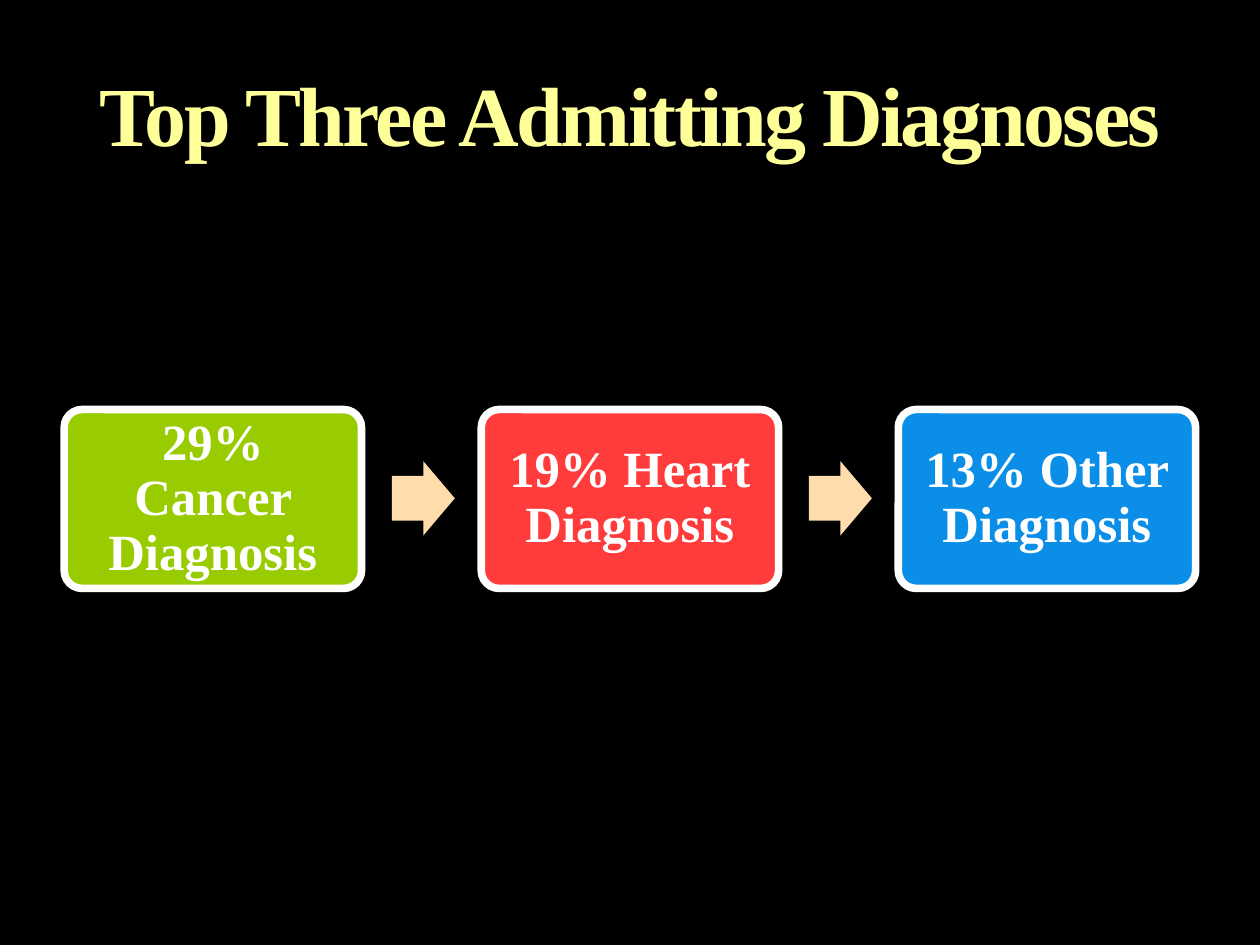
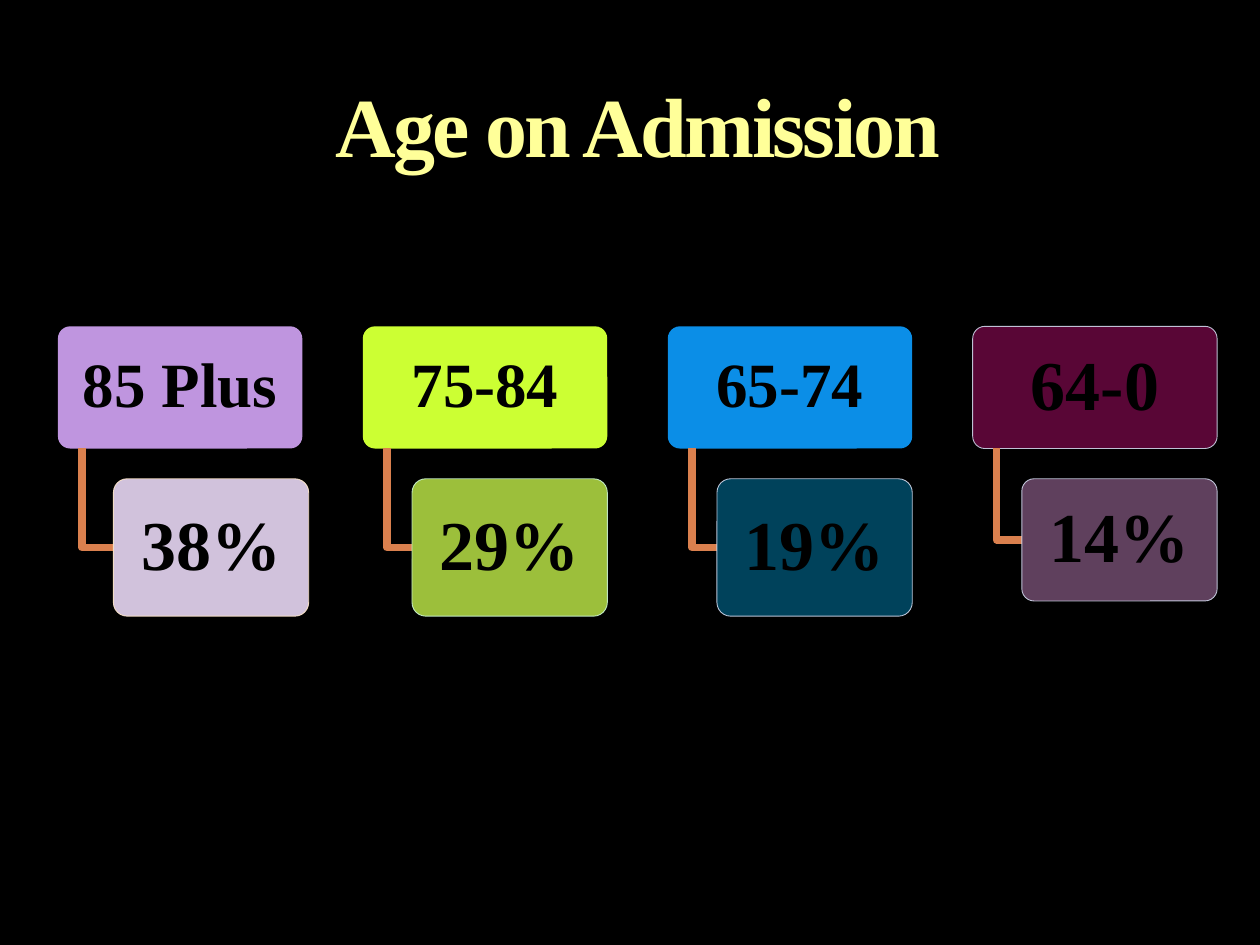
import pptx
import pptx.dml.color
import pptx.enum.shapes
import pptx.enum.text
import pptx.oxml.ns
import pptx.util
from lxml import etree

Inches = pptx.util.Inches
Pt = pptx.util.Pt
SHAPES = pptx.enum.shapes.MSO_SHAPE
ANCHOR = pptx.enum.text.MSO_ANCHOR

FONT = "Times New Roman"
BLACK, WHITE = "000000", "FFFFFF"
TITLE_YELLOW = "FFFF99"
ARROW_PEACH = "FFDCAB"
ELBOW_ORANGE = "DA804E"
PALE_BLUE = "CFD6EA"
THICK, THIN = 4.33, 0.5


def rgb(color):
    return pptx.dml.color.RGBColor.from_string(color)


def set_opacity(parent, percent):
    """Make the solid fill directly inside an XML element translucent."""
    if percent < 100:
        qn = pptx.oxml.ns.qn
        color = parent.find(qn("a:solidFill")).find(qn("a:srgbClr"))
        etree.SubElement(color, qn("a:alpha")).set("val", str(percent * 1000))


class Deck:
    def __init__(self):
        self.presentation = pptx.Presentation()
        self.presentation.slide_width = Inches(10)
        self.presentation.slide_height = Inches(7.5)
        self.slide = None

    def add_slide(self, title, left, top):
        layout = self.presentation.slide_layouts[5]
        self.slide = self.presentation.slides.add_slide(layout)
        background = self.slide.background.fill
        background.solid()
        background.fore_color.rgb = rgb(BLACK)
        shape = self.slide.shapes.title
        shape.left, shape.top = Inches(left), Inches(top)
        shape.width, shape.height = Inches(10), Inches(0.75)
        self.set_text(shape, title, 48, TITLE_YELLOW, (0, 0), ANCHOR.TOP)
        shape.text_frame.auto_size = pptx.enum.text.MSO_AUTO_SIZE.SHAPE_TO_FIT_TEXT
        run = shape.text_frame.paragraphs[0].runs[0]
        run._r.get_or_add_rPr().set("spc", "-150")

    def set_text(self, shape, text, size, color, insets, anchor=ANCHOR.MIDDLE):
        """Put one centred bold paragraph in a shape; insets are (side, top)."""
        frame = shape.text_frame
        frame.word_wrap = True
        frame.vertical_anchor = anchor
        frame.margin_left = frame.margin_right = Inches(insets[0])
        frame.margin_top = frame.margin_bottom = Inches(insets[1])
        paragraph = frame.paragraphs[0]
        paragraph.text = text
        paragraph.alignment = pptx.enum.text.PP_ALIGN.CENTER
        paragraph.line_spacing = 0.9
        paragraph.font.name = FONT
        paragraph.font.size = Pt(size)
        paragraph.font.bold = True
        paragraph.font.color.rgb = rgb(color)

    def outline(self, shape, color, width, opacity=100):
        shape.line.width = Pt(width)
        shape.line.color.rgb = rgb(color)
        line = shape._element.spPr.find(pptx.oxml.ns.qn("a:ln"))
        set_opacity(line, opacity)

    def shape(self, kind, box, adjustments, fill, opacity=100):
        """Add a filled shape without outline; box is left, top, width, height."""
        shape = self.slide.shapes.add_shape(kind, *map(Inches, box))
        shape.shadow.inherit = False
        for index, value in enumerate(adjustments):
            shape.adjustments[index] = value
        shape.fill.solid()
        shape.fill.fore_color.rgb = rgb(fill)
        set_opacity(shape._element.spPr, opacity)
        shape.line.fill.background()
        return shape

    def card(self, box, text, size, color, insets, fill, opacity=100):
        card = self.shape(SHAPES.ROUNDED_RECTANGLE, box, [0.1], fill, opacity)
        self.set_text(card, text, size, color, insets)
        return card

    def arrow(self, box):
        self.shape(SHAPES.RIGHT_ARROW, box, [0.6, 0.5], ARROW_PEACH)

    def elbow(self, left, top, right, bottom):
        """Draw a line down and then right."""
        builder = self.slide.shapes.build_freeform(Inches(left), Inches(top))
        corners = [(left, bottom), (right, bottom)]
        builder.add_line_segments([(Inches(x), Inches(y)) for x, y in corners], close=False)
        elbow = builder.convert_to_shape()
        elbow.shadow.inherit = False
        elbow.fill.background()
        self.outline(elbow, ELBOW_ORANGE, THICK)


def build_diagnoses(deck):
    deck.add_slide("Top Three Admitting Diagnoses", 0, 0.59)
    diagnoses = [
        ("29% Cancer Diagnosis", "99CC00"),
        ("19% Heart Diagnosis", "FF3B3B"),
        ("13% Other Diagnosis", "0B8EE7"),
    ]
    for index, (text, fill) in enumerate(diagnoses):
        left = 0.51 + 3.31 * index
        if index:
            deck.arrow((left - 0.71, 3.66, 0.5, 0.59))
        card = deck.card((left, 3.25, 2.36, 1.42), text, 29, WHITE, (0.12, 0.12), fill)
        deck.outline(card, WHITE, THICK)


def build_ages(deck):
    deck.add_slide("Age on Admission", 0.06, 0.67)
    # age, size, fill, opacity, outline; share, fill, opacity, outline, height, shift
    groups = [
        (("85 Plus", 36, "BF95DF", 100, None), ("38%", "E8D8F4", 90, "FFE8CC", 1.09, 0.05)),
        (("75-84", 36, "CCFF33", 100, None), ("29%", "D1FF4F", 75, "CCF6D3", 1.09, 0)),
        (("65-74", 36, "0B8EE7", 100, None), ("19%", "00B0F0", 38, PALE_BLUE, 1.09, 0)),
        (("64-0", 40, "EC128F", 38, PALE_BLUE), ("14%", "FCAAF6", 38, PALE_BLUE, 0.97, 0)),
    ]
    top, height, share_top = 2.59, 0.97, 3.8
    for index, (age_group, share_group) in enumerate(groups):
        left = 0.46 + 2.42 * index
        age, size, fill, opacity, line = age_group
        header = deck.card((left, top, 1.94, height), age, size, BLACK,
                           (0.07, 0.05), fill, opacity)
        if line:
            deck.outline(header, line, THIN, 90)

        share, fill, opacity, line, share_height, shift = share_group
        share_left = left + 0.39 + shift
        deck.elbow(left + 0.19, top + height, share_left, share_top + share_height / 2)
        card = deck.card((share_left, share_top, 1.55, share_height), share, 40, BLACK,
                         (0.08, 0.06), fill, opacity)
        deck.outline(card, line, THIN, 90)


def main():
    deck = Deck()
    build_diagnoses(deck)
    build_ages(deck)
    deck.presentation.save("out.pptx")


if __name__ == "__main__":
    main()
